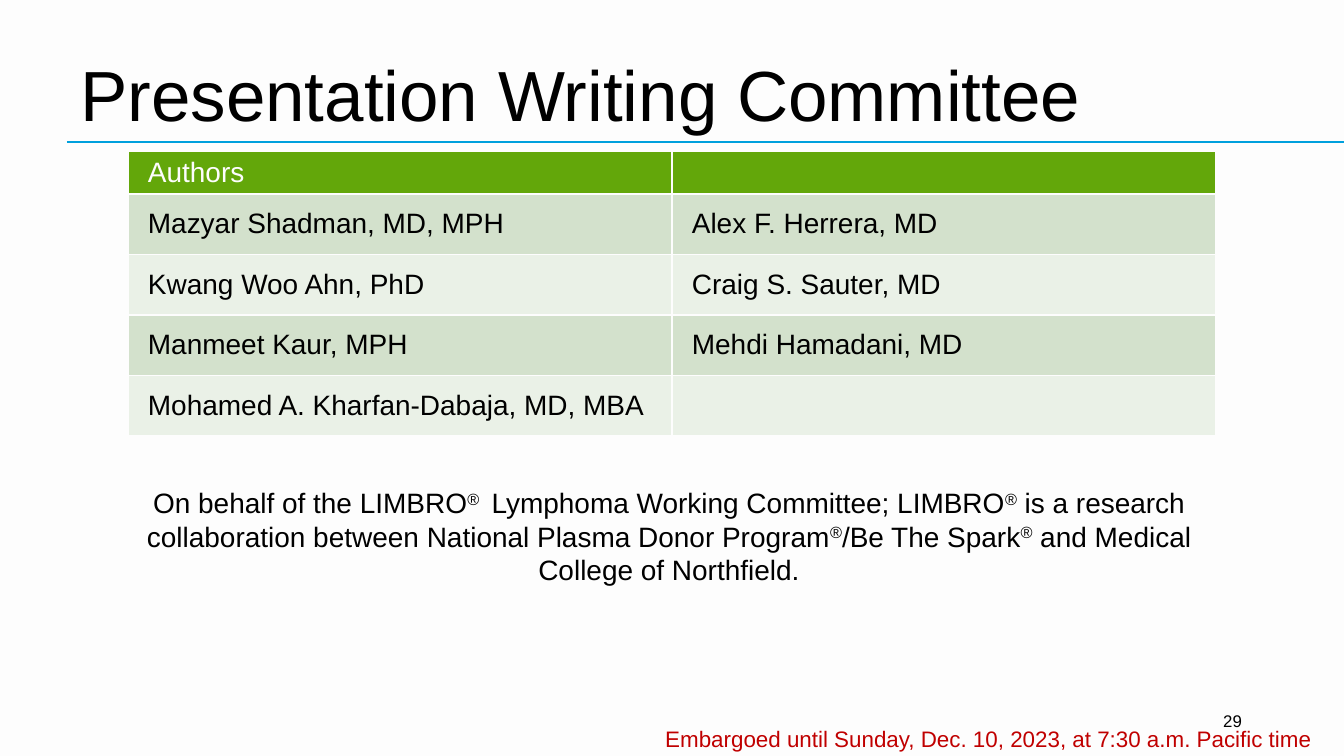
import pptx
import pptx.util
import pptx.dml.color
import pptx.enum.text
import pptx.enum.shapes
import pptx.oxml
import lxml.etree

PX = 914400 / 134.4
COLORS = {
    "page": "FDFDFD",
    "text": "000000",
    "rule": "00A0DD",
    "header": "63A70A",
    "band_dark": "D3E1CC",
    "band_light": "EAF1E7",
    "embargo": "C00000",
}
AUTHORS = [
    ("Authors", ""),
    ("Mazyar Shadman, MD, MPH", "Alex F. Herrera, MD"),
    ("Kwang Woo Ahn, PhD", "Craig S. Sauter, MD"),
    ("Manmeet Kaur, MPH", "Mehdi Hamadani, MD"),
    ("Mohamed A. Kharfan-Dabaja, MD, MBA", ""),
]
BEHALF = [
    "On behalf of the LIMBRO", "® ",
    " Lymphoma Working Committee; LIMBRO", "®",
    " is a research collaboration between National Plasma Donor Program", "®",
    "/Be The Spark", "®",
    " and Medical College of Northfield.",
]
ANCHOR = pptx.enum.text.MSO_ANCHOR
ALIGN = pptx.enum.text.PP_ALIGN


def emu(px):
    return pptx.util.Emu(round(px * PX))


def rgb(name):
    return pptx.dml.color.RGBColor.from_string(COLORS[name])


def style(para, size, color):
    para.font.name = "Arial"
    para.font.size = pptx.util.Pt(size)
    para.font.color.rgb = rgb(color)


def add_text(page, box, spans, size, color="text", anchor=ANCHOR.TOP, align=ALIGN.LEFT):
    frame = page.shapes.add_textbox(*map(emu, box)).text_frame
    frame.word_wrap = True
    frame.vertical_anchor = anchor
    para = frame.paragraphs[0]
    para.alignment = align
    style(para, size, color)
    for text in spans:
        span = para.add_run()
        span.text = text
        if text.startswith("®"):
            span.font._element.set("baseline", "30000")


def add_heading(page, box):
    left, top, width, height = box
    rule = page.shapes.add_connector(
        pptx.enum.shapes.MSO_CONNECTOR.STRAIGHT,
        emu(left), emu(top + height), emu(1344), emu(top + height))
    rule.line.color.rgb = rgb("rule")
    rule.line.width = pptx.util.Pt(0.75)
    lxml.etree.SubElement(rule._element.spPr, pptx.oxml.ns.qn("a:effectLst"))
    add_text(page, box, ["Presentation Writing Committee"], 38, anchor=ANCHOR.BOTTOM)


def set_borders(cell):
    properties = cell._tc.get_or_add_tcPr()
    for index, side in enumerate("LRTB"):
        border = pptx.oxml.parse_xml(
            f'<a:ln{side} {pptx.oxml.ns.nsdecls("a")} w="12700"><a:solidFill>'
            f'<a:srgbClr val="{COLORS["page"]}"/></a:solidFill></a:ln{side}>')
        properties.insert(index, border)


def add_authors(page, box, header_height):
    body_height = (box[3] - header_height) / (len(AUTHORS) - 1)
    table = page.shapes.add_table(len(AUTHORS), 2, *map(emu, box)).table
    table.first_row = False
    table.horz_banding = False
    for column in table.columns:
        column.width = emu(box[2] / 2)
    for number, names in enumerate(AUTHORS):
        is_header = number == 0
        table.rows[number].height = emu(header_height if is_header else body_height)
        fill = "header" if is_header else ("band_light", "band_dark")[number % 2]
        for cell, name in zip(table.rows[number].cells, names):
            cell.fill.solid()
            cell.fill.fore_color.rgb = rgb(fill)
            cell.margin_left = cell.margin_right = emu(20)
            cell.margin_top = cell.margin_bottom = 0
            cell.vertical_anchor = ANCHOR.MIDDLE
            cell.text = name
            style(cell.text_frame.paragraphs[0], 15, "page" if is_header else "text")
            set_borders(cell)


def add_footer(page, box):
    left, top, width, height = box
    add_text(page, (left + 558, top, 67, 41), ["29"], 9, anchor=ANCHOR.MIDDLE)
    add_text(page, (left, top + 19, width, height - 19),
             ["Embargoed until Sunday, Dec. 10, 2023, at 7:30 a.m. Pacific time"], 12, "embargo")


def main():
    deck = pptx.Presentation()
    deck.slide_width, deck.slide_height = emu(1344), emu(756)
    page = deck.slides.add_slide(deck.slide_layouts[6])
    page.background.fill.solid()
    page.background.fill.fore_color.rgb = rgb("page")
    add_heading(page, (67, 16, 1210, 126))
    add_authors(page, (128, 151, 1088, 285), 43)
    add_text(page, (128, 479, 1082, 101), BEHALF, 15, align=ALIGN.CENTER)
    add_footer(page, (652, 700, 784, 59))
    deck.save("out.pptx")


if __name__ == "__main__":
    main()
